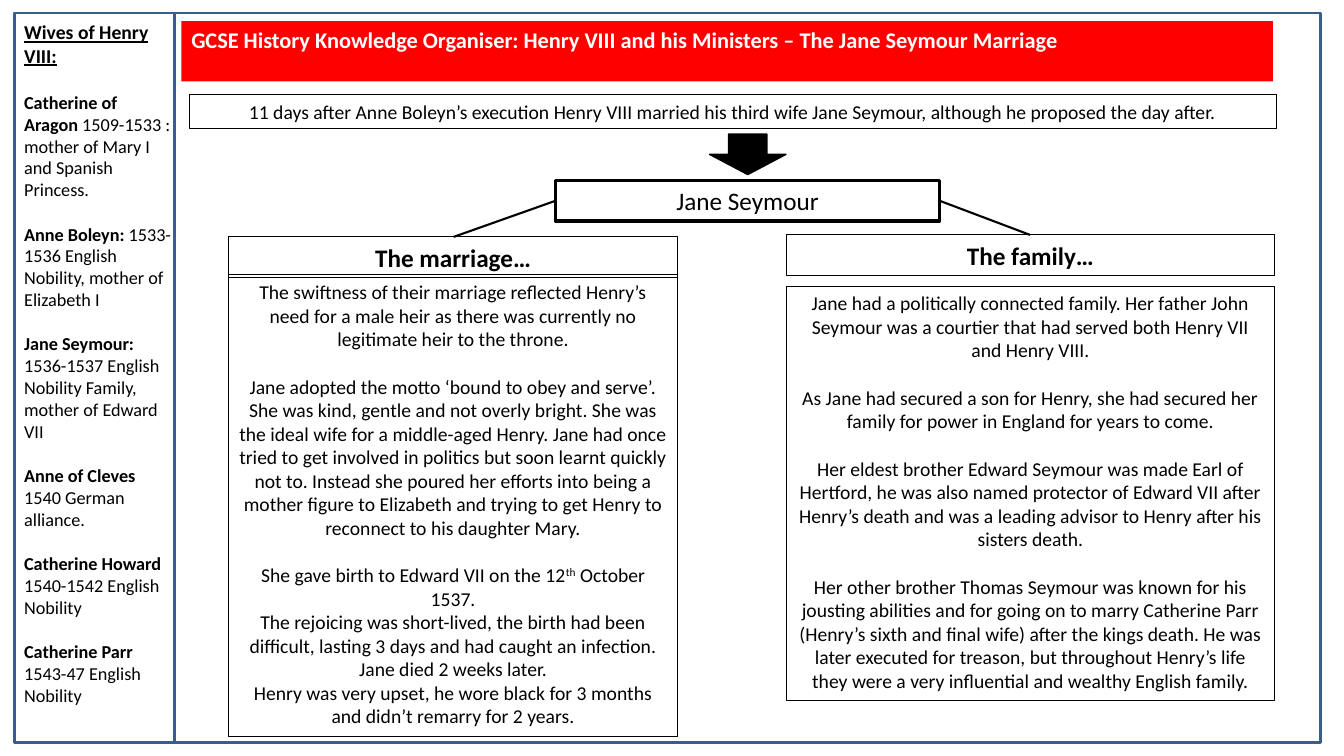
from dataclasses import dataclass

from lxml import etree
from pptx import Presentation
from pptx.dml.color import RGBColor
from pptx.enum.shapes import MSO_CONNECTOR, MSO_SHAPE
from pptx.enum.text import MSO_ANCHOR, MSO_AUTO_SIZE, PP_ALIGN
from pptx.oxml.ns import qn
from pptx.util import Cm, Pt

RECTANGLE, DOWN_ARROW = MSO_SHAPE.RECTANGLE, MSO_SHAPE.DOWN_ARROW
STRAIGHT = MSO_CONNECTOR.STRAIGHT
TOP = MSO_ANCHOR.TOP
NO_AUTOFIT = MSO_AUTO_SIZE.NONE
LEFT, CENTER = PP_ALIGN.LEFT, PP_ALIGN.CENTER


@dataclass(frozen=True)
class Theme:
    font: str = "Calibri"
    ink: RGBColor = RGBColor(0, 0, 0)
    white: RGBColor = RGBColor(255, 255, 255)
    banner: RGBColor = RGBColor(255, 0, 0)
    frame: RGBColor = RGBColor(0x39, 0x5E, 0x89)
    title: Pt = Pt(16)
    heading: Pt = Pt(18)
    body: Pt = Pt(14)
    wives: Pt = Pt(13)
    body_gap: Pt = Pt(17)
    wives_gap: Pt = Pt(16)


theme = Theme()
presentation = Presentation()
presentation.slide_width, presentation.slide_height = Cm(33.87), Cm(19.05)
slide = presentation.slides.add_slide(presentation.slide_layouts[5])


def add_box(left, top, width, height, line_color, line_width, kind=RECTANGLE):
    box = slide.shapes.add_shape(kind, Cm(left), Cm(top), Cm(width), Cm(height))
    box.shadow.inherit = False
    box.fill.background()
    box.line.color.rgb = line_color
    box.line.width = Pt(line_width)
    return box


def write(shape, paragraphs, size, align=CENTER, color=theme.ink):
    frame = shape.text_frame
    frame.word_wrap = True
    frame.auto_size = NO_AUTOFIT
    frame.vertical_anchor = TOP
    frame.margin_left = frame.margin_right = Cm(0.25)
    frame.margin_top = frame.margin_bottom = Cm(0.13)
    for index, (gap, runs) in enumerate(paragraphs):
        paragraph = frame.add_paragraph() if index else frame.paragraphs[0]
        paragraph.alignment = align
        paragraph.space_before = gap
        for text, style in runs:
            run = paragraph.add_run()
            run.text = text
            run.font.name = theme.font
            run.font.size = theme.body if style == "sidebar heading" else size
            run.font.color.rgb = color
            run.font.bold = style in ("bold", "sidebar heading")
            if style == "sidebar heading":
                run.font.underline = True
            if style == "superscript":
                run._r.get_or_add_rPr().set("baseline", "30000")


page_frame = add_box(0.36, 0.33, 32.92, 18.39, theme.frame, 2)

banner = slide.shapes.title
banner.left, banner.top, banner.width, banner.height = Cm(4.57), Cm(0.53), Cm(27.51), Cm(1.52)
banner.fill.solid()
banner.fill.fore_color.rgb = theme.banner
write(banner, [(0, [("GCSE History Knowledge Organiser: Henry VIII and his Ministers – The Jane Seymour Marriage", "bold")])],
      theme.title, LEFT, theme.white)

sidebar = add_box(0.36, 0.33, 4.04, 18.39, theme.frame, 2)
wives = [
    ("Catherine of Aragon ", "1509-1533 : mother of Mary I and Spanish Princess."),
    ("Anne Boleyn: ", "1533-1536 English Nobility, mother of Elizabeth I"),
    ("Jane Seymour: ", "1536-1537 English Nobility Family, mother of Edward VII"),
    ("Anne of Cleves ", "1540 German alliance."),
    ("Catherine Howard ", "1540-1542 English Nobility"),
    ("Catherine Parr ", "1543-47 English Nobility"),
]
wives_list = slide.shapes.add_textbox(Cm(0.36), Cm(0.38), Cm(4.19), Cm(18.31))
write(wives_list,
      [(0, [("Wives of Henry VIII:", "sidebar heading")])]
      + [(theme.wives_gap, [(name, "bold"), (facts, "plain")]) for name, facts in wives],
      theme.wives, LEFT)
wives_list.text_frame.paragraphs[1].space_before = theme.body_gap
wives_list.text_frame.margin_right = Cm(0.2)

opening = add_box(4.78, 2.39, 27.38, 0.86, theme.ink, 0.75)
write(opening, [(0, [("11 days after Anne Boleyn’s execution Henry VIII married his third wife Jane Seymour, although he proposed the day after.", "plain")])],
      theme.body)

arrow = add_box(17.88, 3.38, 1.93, 1.02, theme.ink, 1, DOWN_ARROW)
arrow.fill.solid()
arrow.fill.fore_color.rgb = theme.ink

headings = [
    ("Jane Seymour", "plain", 14, 4.55, 9.68, 2.25),
    ("The marriage…", "bold", 5.77, 5.97, 11.3, 0.75),
    ("The family…", "bold", 19.81, 5.92, 12.32, 0.75),
]
for text, style, left, top, width, line_width in headings:
    heading = add_box(left, top, width, 1.02, theme.ink, line_width)
    write(heading, [(0, [(text, style)])], theme.heading)

for start_x, end_x, end_y in [(14, 11.43, 5.97), (23.68, 25.96, 5.92)]:
    branch = slide.shapes.add_connector(STRAIGHT, Cm(start_x), Cm(5.06), Cm(end_x), Cm(end_y))
    branch.line.color.rgb = theme.ink
    branch.line.width = Pt(1.5)
    etree.SubElement(branch._element.spPr, qn("a:effectLst"))

marriage = [
    (0, [("The swiftness of their marriage reflected Henry’s need for a male heir as there was currently no legitimate heir to the throne.", "plain")]),
    (theme.body_gap, [("Jane adopted the motto ‘bound to obey and serve’.", "plain")]),
    (0, [("She was kind, gentle and not overly bright. She was the ideal wife for a middle-aged Henry. "
          "Jane had once tried to get involved in politics but soon learnt quickly not to. "
          "Instead she poured her efforts into being a mother figure to Elizabeth and trying to get Henry "
          "to reconnect to his daughter Mary.", "plain")]),
    (theme.body_gap, [("She gave birth to Edward VII on the 12", "plain"), ("th", "superscript"), (" October 1537.", "plain")]),
    (0, [("The rejoicing was short-lived, the birth had been difficult, lasting 3 days and had caught an infection. "
          "Jane died 2 weeks later.", "plain")]),
    (0, [("Henry was very upset, he wore black for 3 months and didn’t remarry for 2 years.", "plain")]),
]
family = [
    (0, [("Jane had a politically connected family. Her father John Seymour was a courtier that had served "
          "both Henry VII and Henry VIII.", "plain")]),
    (theme.body_gap, [("As Jane had secured a son for Henry, she had secured her family for power in England for years to come.", "plain")]),
    (theme.body_gap, [("Her eldest brother Edward Seymour was made Earl of Hertford, he was also named protector of Edward VII "
                       "after Henry’s death and was a leading advisor to Henry after his sisters death.", "plain")]),
    (theme.body_gap, [("Her other brother Thomas Seymour was known for his jousting abilities and for going on to marry "
                       "Catherine Parr (Henry’s sixth and final wife) after the kings death. He was later executed for treason, "
                       "but throughout Henry’s life they were a very influential and wealthy English family.", "plain")]),
]
for story, left, top, width, height in [(marriage, 5.77, 6.93, 11.3, 11.63), (family, 19.81, 7.21, 12.32, 10.44)]:
    panel = add_box(left, top, width, height, theme.ink, 0.75)
    write(panel, story, theme.body)

presentation.save("out.pptx")
